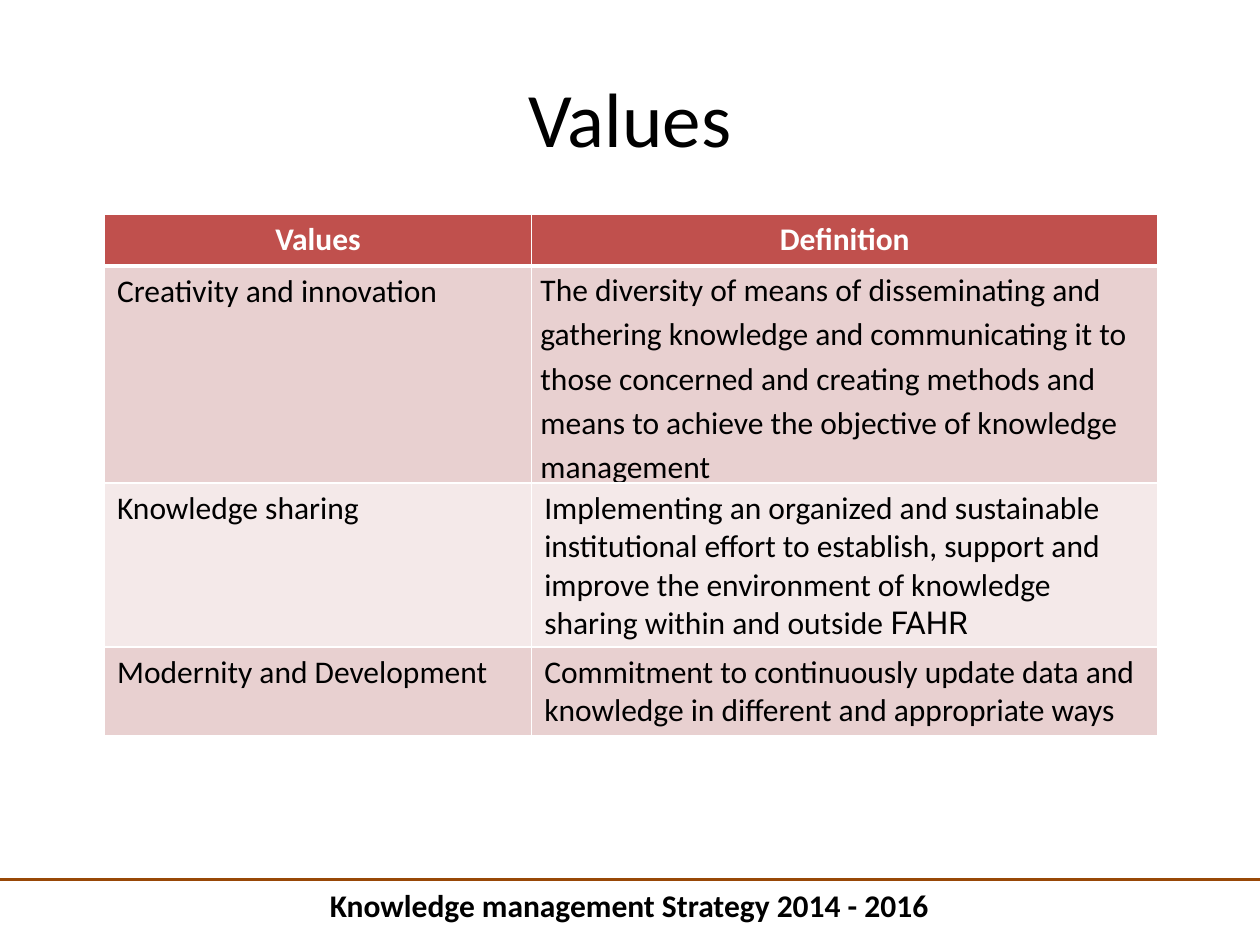
from dataclasses import dataclass

from lxml.etree import SubElement
from pptx import Presentation
from pptx.dml.color import RGBColor
from pptx.enum.shapes import MSO_CONNECTOR
from pptx.enum.text import MSO_ANCHOR, MSO_AUTO_SIZE, PP_ALIGN
from pptx.oxml.ns import qn
from pptx.util import Inches, Pt


@dataclass(frozen=True)
class Theme:
    font: str = "Calibri"
    accent_font: str = "Roboto"
    title_size: int = 44
    body_size: int = 18
    text: str = "000000"
    white: str = "FFFFFF"
    header: str = "C0504D"
    bands: tuple = ("E8D0D0", "F4E9E9")
    rule: str = "984807"


theme = Theme()


def add_run(paragraph, text, size=theme.body_size, color=theme.text, bold=False, font=theme.font):
    run = paragraph.add_run()
    run.text = text
    run.font.name = font
    run.font.size = Pt(size)
    run.font.bold = bold
    run.font.color.rgb = RGBColor.from_string(color)


def set_borders(cell, bottom_width, top_width):
    """Draw white borders; call before the cell's fill is set, as the XML order requires."""
    properties = cell._tc.get_or_add_tcPr()
    for side, width in (("L", 1), ("R", 1), ("T", top_width), ("B", bottom_width)):
        border = SubElement(properties, qn(f"a:ln{side}"), w=str(Pt(width)))
        fill = SubElement(border, qn("a:solidFill"))
        SubElement(fill, qn("a:srgbClr"), val=theme.white)


presentation = Presentation()
presentation.slide_width = Inches(10)
presentation.slide_height = Inches(7.5)
slide = presentation.slides.add_slide(presentation.slide_layouts[6])

# Footer
footer = slide.shapes.add_textbox(Inches(2.52), Inches(6.98), Inches(5), Inches(0.4)).text_frame
footer.word_wrap = False
footer.auto_size = MSO_AUTO_SIZE.SHAPE_TO_FIT_TEXT
add_run(footer.paragraphs[0], "Knowledge management Strategy 2014 - 2016", bold=True)

footer_rule = slide.shapes.add_connector(
    MSO_CONNECTOR.STRAIGHT, Inches(0), Inches(6.98), Inches(10), Inches(6.98)
)
footer_rule.line.color.rgb = RGBColor.from_string(theme.rule)
footer_rule.line.width = Pt(2.25)
SubElement(footer_rule._element.spPr, qn("a:effectLst"))

# Title
title = slide.shapes.add_textbox(Inches(0.5), Inches(0.3), Inches(9), Inches(1.25)).text_frame
title.word_wrap = True
title.vertical_anchor = MSO_ANCHOR.MIDDLE
title.paragraphs[0].alignment = PP_ALIGN.CENTER
add_run(title.paragraphs[0], "Values", size=theme.title_size)

# Values and their definitions; each cell is a list of (text, font) runs
rows = [
    ([("Values", theme.font)], [("Definition", theme.font)]),
    (
        [("Creativity and innovation", theme.font)],
        [("The diversity of means of disseminating and gathering knowledge and "
          "communicating it to those concerned and creating methods and means to "
          "achieve the objective of knowledge management", theme.font)],
    ),
    (
        [("Knowledge sharing", theme.font)],
        [("Implementing an organized and sustainable institutional effort to "
          "establish, support and improve the environment of knowledge sharing "
          "within and outside ", theme.font), ("FAHR", theme.accent_font)],
    ),
    (
        [("Modernity and Development", theme.font)],
        [("Commitment to continuously update data and knowledge in different and "
          "appropriate ways", theme.font)],
    ),
]
column_widths = (3.39, 4.97)
row_height = 0.41  # rows grow to fit their text

table = slide.shapes.add_table(
    len(rows), len(column_widths),
    Inches(0.83), Inches(1.7), Inches(sum(column_widths)), Inches(row_height * len(rows)),
).table
for column, width in zip(table.columns, column_widths):
    column.width = Inches(width)

for row_index, row in enumerate(rows):
    is_header = row_index == 0
    table.rows[row_index].height = Inches(row_height)
    for column_index, runs in enumerate(row):
        cell = table.cell(row_index, column_index)
        set_borders(cell, 3 if is_header else 1, 3 if row_index == 1 else 1)
        cell.fill.solid()
        band = theme.bands[(row_index - 1) % 2]
        cell.fill.fore_color.rgb = RGBColor.from_string(theme.header if is_header else band)

        paragraph = cell.text_frame.paragraphs[0]
        if is_header:
            paragraph.alignment = PP_ALIGN.CENTER
        else:
            paragraph.alignment = PP_ALIGN.JUSTIFY if column_index == 0 else PP_ALIGN.LEFT
        for text, font in runs:
            add_run(paragraph, text, color=theme.white if is_header else theme.text,
                    bold=is_header, font=font)

# The first definition is set more openly, with tight margins
first_definition = table.cell(1, 1)
first_definition.vertical_anchor = MSO_ANCHOR.MIDDLE
first_definition.margin_left = first_definition.margin_right = Inches(0.07)
first_definition.margin_top = first_definition.margin_bottom = Inches(0)
first_definition.text_frame.paragraphs[0].line_spacing = 1.15
first_definition.text_frame.paragraphs[0].space_after = Pt(10)

presentation.save("out.pptx")
